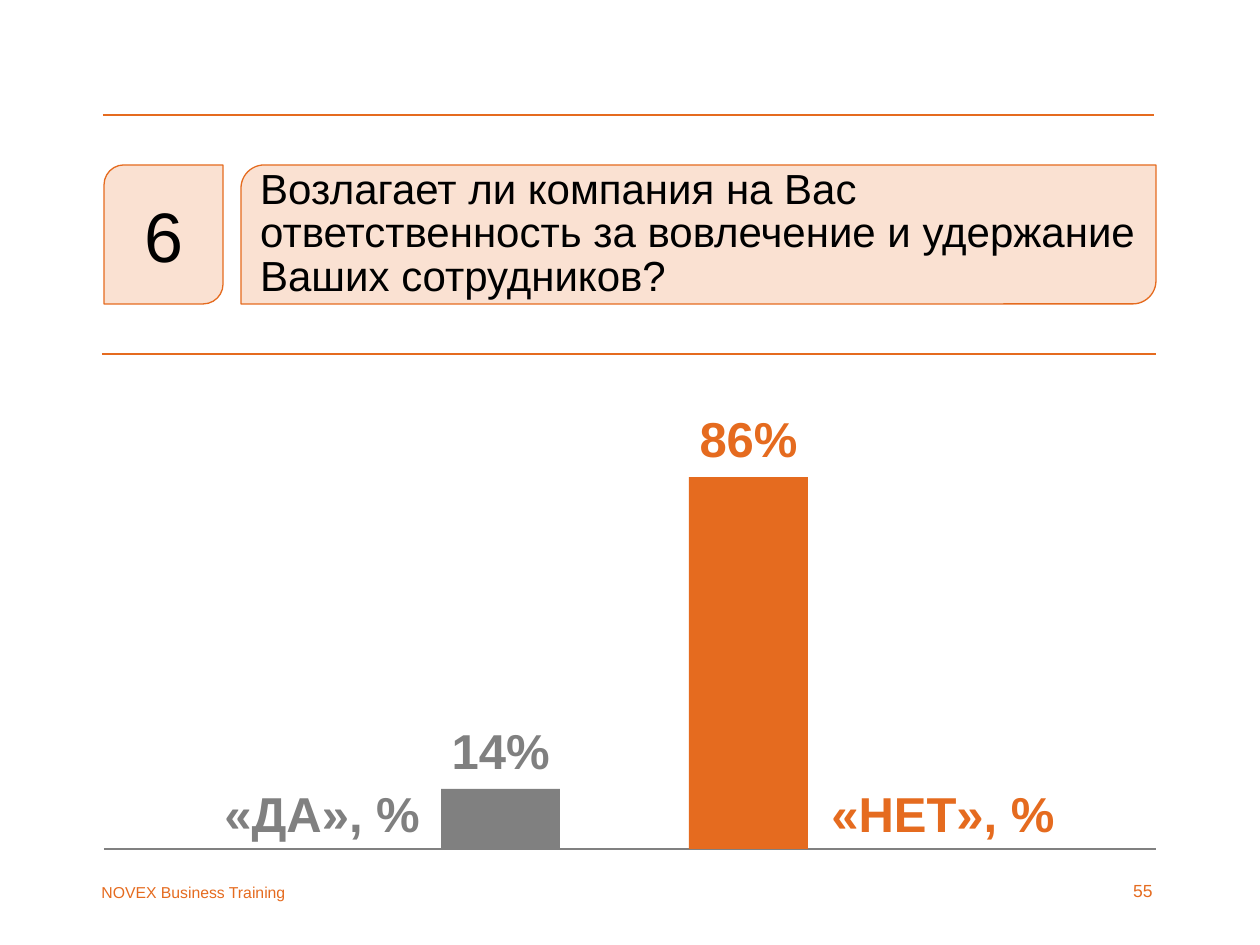
"""Builds the survey slide for question 6 with its two answer bars."""
from dataclasses import dataclass

from lxml.etree import SubElement
from pptx import Presentation
from pptx.dml.color import RGBColor
from pptx.enum.shapes import MSO_CONNECTOR, MSO_SHAPE
from pptx.enum.text import MSO_ANCHOR, PP_ALIGN
from pptx.oxml.ns import qn
from pptx.util import Emu, Pt


@dataclass(frozen=True)
class Theme:
    font: str = "Arial"
    accent: str = "E56B1F"
    tint: str = "FAE1D2"
    muted: str = "808080"
    ink: str = "000000"
    number_size: int = 40
    question_size: int = 24
    question_leading: int = 25
    answer_size: int = 28
    page_size: int = 10
    footer_size: int = 9


def px(length):
    return Emu(round(length * 914400 / 126))


class SlideBuilder:
    def __init__(self, slide, theme):
        self.slide = slide
        self.theme = theme

    def set_text(self, frame, text, size, color, align, anchor, bold=False):
        frame.word_wrap = True
        frame.vertical_anchor = anchor
        paragraph = frame.paragraphs[0]
        paragraph.text = text
        paragraph.alignment = align
        paragraph.font.name = self.theme.font
        paragraph.font.size = Pt(size)
        paragraph.font.bold = bold
        paragraph.font.color.rgb = RGBColor.from_string(color)
        return paragraph

    def label(self, box, text, size, color, align=PP_ALIGN.LEFT,
              anchor=MSO_ANCHOR.TOP, bold=False):
        frame = self.slide.shapes.add_textbox(*map(px, box)).text_frame
        self.set_text(frame, text, size, color, align, anchor, bold)

    def rule(self, left, right, y, color, width=1):
        line = self.slide.shapes.add_connector(
            MSO_CONNECTOR.STRAIGHT, px(left), px(y), px(right), px(y))
        line.line.color.rgb = RGBColor.from_string(color)
        line.line.width = Pt(width)
        SubElement(line._element.spPr, qn("a:effectLst"))

    def block(self, preset, box, fill, outline=None):
        shape = self.slide.shapes.add_shape(preset, *map(px, box))
        shape.shadow.inherit = False
        shape.fill.solid()
        shape.fill.fore_color.rgb = RGBColor.from_string(fill)
        if outline:
            shape.line.color.rgb = RGBColor.from_string(outline)
            shape.line.width = Pt(0.75)
        else:
            shape.line.fill.background()
        return shape

    def card(self, box, text, size, align, leading=None):
        shape = self.block(MSO_SHAPE.ROUND_2_DIAG_RECTANGLE, box,
                           self.theme.tint, self.theme.accent)
        paragraph = self.set_text(shape.text_frame, text, size, self.theme.ink,
                                  align, MSO_ANCHOR.MIDDLE)
        if leading:
            paragraph.line_spacing = Pt(leading)

    def answer(self, bar_left, percent, color, name, name_left, name_align):
        baseline, bar_width, label_height, value_width = 849, 119, 79, 159
        size = self.theme.answer_size
        bar_height = round(percent * 4.32)
        bar_top = baseline - bar_height
        value_left = bar_left + (bar_width - value_width) // 2
        self.label((name_left, baseline - label_height, 348, label_height),
                   name, size, color, name_align, MSO_ANCHOR.BOTTOM, True)
        self.block(MSO_SHAPE.RECTANGLE,
                   (bar_left, bar_top, bar_width, bar_height), color)
        self.label((value_left, bar_top - label_height, value_width, label_height),
                   f"{percent}%", size, color, PP_ALIGN.CENTER,
                   MSO_ANCHOR.MIDDLE, True)


def main():
    theme = Theme()
    deck = Presentation()
    deck.slide_width, deck.slide_height = px(1260), px(945)
    builder = SlideBuilder(deck.slides.add_slide(deck.slide_layouts[6]), theme)

    builder.rule(103, 1154, 115, theme.accent)
    builder.label((1102, 874, 63, 34), "55", theme.page_size, theme.accent,
                  PP_ALIGN.RIGHT)
    builder.label((89, 877, 256, 32), "NOVEX Business Training",
                  theme.footer_size, theme.accent)
    builder.rule(102, 1156, 354, theme.accent)

    builder.card((104, 165, 119, 139), "6", theme.number_size, PP_ALIGN.CENTER)
    builder.card((241, 165, 915, 139),
                 "Возлагает ли компания на Вас ответственность за вовлечение "
                 "и удержание Ваших сотрудников?",
                 theme.question_size, PP_ALIGN.LEFT, theme.question_leading)

    builder.rule(104, 1156, 849, theme.muted, 0.75)
    builder.answer(441, 14, theme.muted, "«ДА», %", 84, PP_ALIGN.RIGHT)
    builder.answer(689, 86, theme.accent, "«НЕТ», %", 819, PP_ALIGN.LEFT)
    deck.save("out.pptx")


if __name__ == "__main__":
    main()
